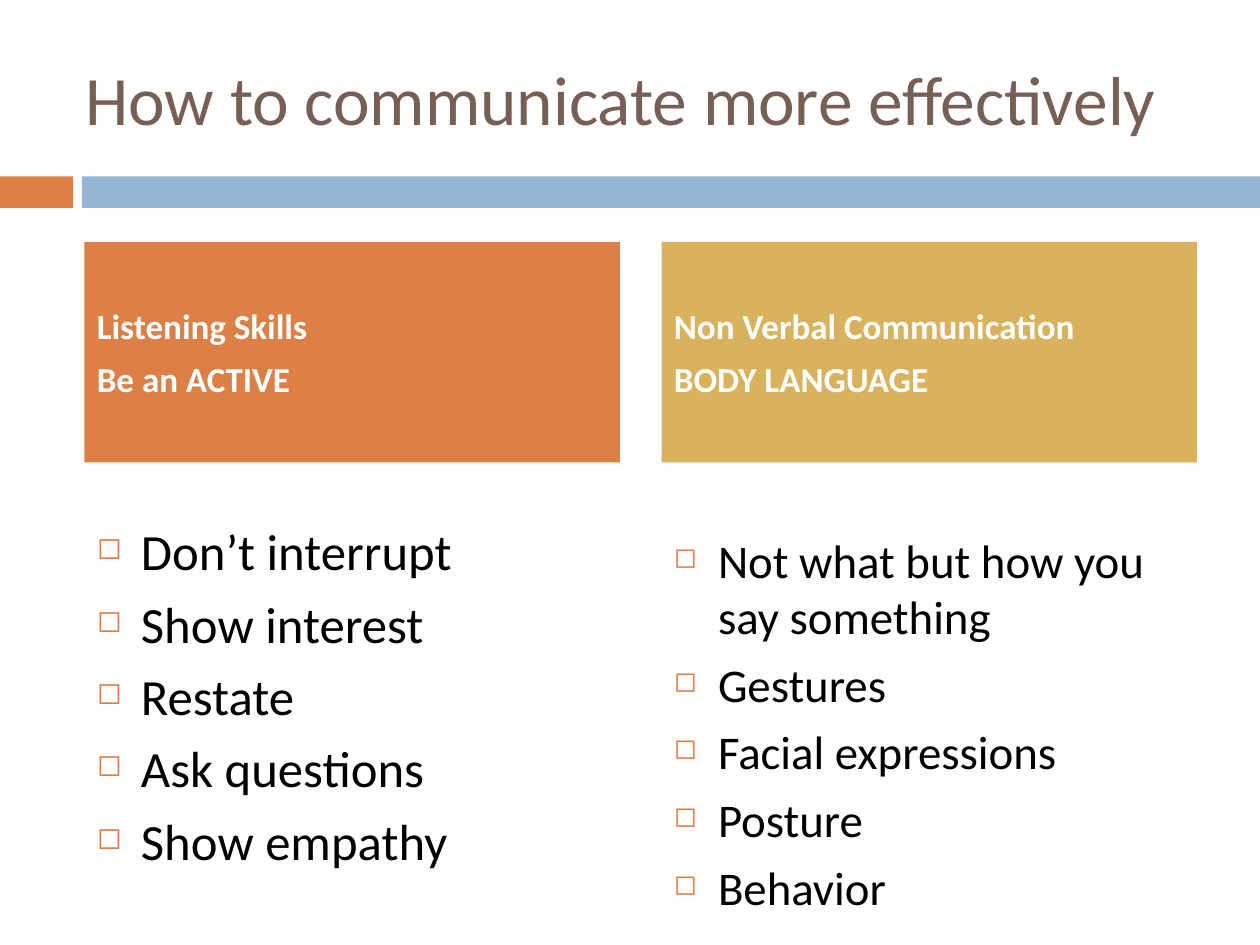
import pptx
import pptx.util
import pptx.dml.color
import pptx.enum.shapes
import pptx.enum.text
from lxml import etree

WIDTH, HEIGHT = 10, 7.5
FONT = "Calibri"
ORANGE, BLUE, GOLD = "DD8047", "94B6D2", "D8B25C"
BROWN, BLACK, WHITE = "775F55", "000000", "FFFFFF"

COL_LEFT, COL_WIDTH, COL_STEP = 0.67, 4.25, 4.58
BAND_TOP, BAND_HEIGHT = 1.4, 0.25
HEADER_TOP, HEADER_HEIGHT = 1.92, 1.75
LIST_HEIGHT = 3

# heading lines, heading fill, list top, list size, list items
COLUMNS = [
    (["Listening Skills", "Be an ACTIVE"], ORANGE, 4.08, 29,
     ["Don’t interrupt", "Show interest", "Restate", "Ask questions",
      "Show empathy"]),
    (["Non Verbal Communication", "BODY LANGUAGE"], GOLD, 4.17, 26.8,
     ["Not what but how you say something", "Gestures",
      "Facial expressions", "Posture", "Behavior"]),
]


def color(value):
    return pptx.dml.color.RGBColor.from_string(value)


def inches(*values):
    return [pptx.util.Inches(v) for v in values]


def add_bullet(p):
    """Give a paragraph a small hollow square and a hanging indent."""
    pPr = p._p.get_or_add_pPr()
    indent = pptx.util.Inches(0.35)
    pPr.set("marL", str(indent))
    pPr.set("indent", str(-indent))
    ns = pptx.oxml.ns.qn
    buClr = etree.SubElement(pPr, ns("a:buClr"))
    etree.SubElement(buClr, ns("a:srgbClr"), val=ORANGE)
    etree.SubElement(pPr, ns("a:buSzPct"), val="60000")
    etree.SubElement(pPr, ns("a:buChar"), char="◻")


def write(sp, lines, size, font_color, bold=False, bullet=False,
          space=0, middle=False):
    """Fill a shape with one paragraph per line in a single format."""
    anchor = pptx.enum.text.MSO_ANCHOR
    tf = sp.text_frame
    tf.word_wrap = True
    tf.vertical_anchor = anchor.MIDDLE if middle else anchor.TOP
    for i, line in enumerate(lines):
        p = tf.paragraphs[0] if i == 0 else tf.add_paragraph()
        p.alignment = pptx.enum.text.PP_ALIGN.LEFT
        p.space_before = pptx.util.Pt(space)
        if bullet:
            add_bullet(p)
        r = p.add_run()
        r.text = line
        r.font.name = FONT
        r.font.size = pptx.util.Pt(size)
        r.font.bold = bold
        r.font.color.rgb = color(font_color)


def add_block(s, left, top, width, height, fill):
    sp = s.shapes.add_shape(pptx.enum.shapes.MSO_SHAPE.RECTANGLE,
                            *inches(left, top, width, height))
    sp.shadow.inherit = False
    sp.fill.solid()
    sp.fill.fore_color.rgb = color(fill)
    sp.line.fill.background()
    return sp


def add_text(s, left, top, width, height, lines, **style):
    sp = s.shapes.add_textbox(*inches(left, top, width, height))
    write(sp, lines, **style)


def add_column(s, left, heading, fill, list_top, list_size, items):
    header = add_block(s, left, HEADER_TOP, COL_WIDTH, HEADER_HEIGHT, fill)
    write(header, heading, size=20, font_color=WHITE, bold=True,
          space=6.5, middle=True)
    add_text(s, left, list_top, COL_WIDTH, LIST_HEIGHT, items,
             size=list_size, font_color=BLACK, bullet=True, space=6.5)


def main():
    prs = pptx.Presentation()
    prs.slide_width, prs.slide_height = inches(WIDTH, HEIGHT)
    s = prs.slides.add_slide(prs.slide_layouts[6])
    add_block(s, 0, BAND_TOP, 0.58, BAND_HEIGHT, ORANGE)
    add_block(s, 0.65, BAND_TOP, WIDTH - 0.65, BAND_HEIGHT, BLUE)
    add_text(s, 0.58, 0.3, 8.92, 0.95,
             ["How to communicate more effectively"],
             size=39.6, font_color=BROWN, middle=True)
    for i, column in enumerate(COLUMNS):
        add_column(s, COL_LEFT + i * COL_STEP, *column)
    prs.save("out.pptx")


if __name__ == "__main__":
    main()
